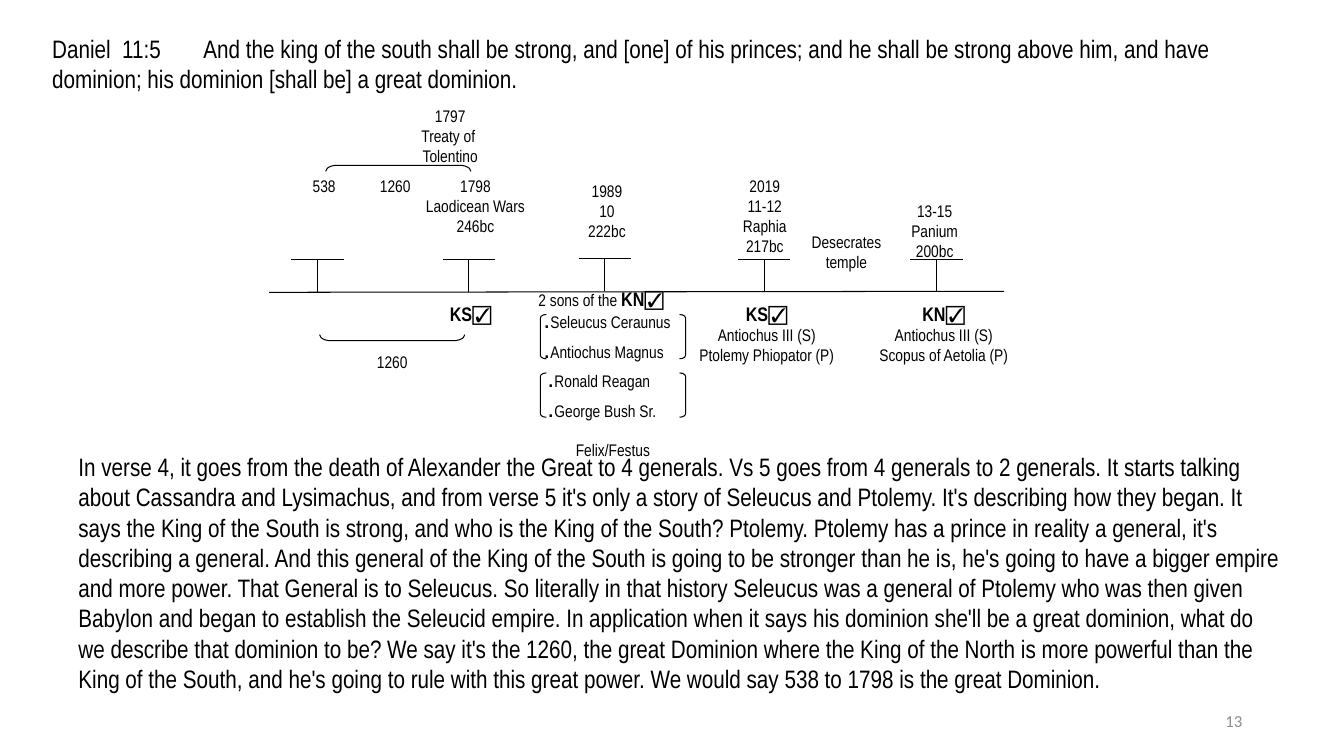
from lxml.etree import SubElement
from pptx import Presentation
from pptx.dml.color import RGBColor
from pptx.enum.shapes import MSO_CONNECTOR as Connector, MSO_SHAPE as Shape
from pptx.enum.text import MSO_ANCHOR as Anchor, PP_ALIGN as Align
from pptx.oxml.ns import qn
from pptx.util import Inches, Pt

NARROW = "Arial Narrow"
BLACK = "000000"
FORMATS = {
    "body": {"name": NARROW, "size": Pt(18)},
    "label": {"name": NARROW, "size": Pt(12)},
    "king": {"name": NARROW, "size": Pt(14), "bold": True},
    "check": {"name": "Arial", "size": Pt(14), "bold": True},
    "dot": {"name": "Arial", "size": Pt(18)},
    "number": {"name": "Calibri", "size": Pt(12)},
}
VERSE = [
    "Daniel  11:5\tAnd the king of the south shall be strong, and [one] of his princes;",
    "and he shall be strong above him, and have dominion;",
    "his dominion [shall be] a great dominion.",
]
COMMENTARY = [
    "In verse 4, it goes from the death of Alexander the Great to 4 generals.",
    "Vs 5 goes from 4 generals to 2 generals.",
    "It starts talking about Cassandra and Lysimachus,",
    "and from verse 5 it's only a story of Seleucus and Ptolemy.",
    "It's describing how they began.",
    "It says the King of the South is strong, and who is the King of the South? Ptolemy.",
    "Ptolemy has a prince in reality a general, it's describing a general.",
    "And this general of the King of the South is going to be stronger than he is,",
    "he's going to have a bigger empire and more power. That General is to Seleucus.",
    "So literally in that history Seleucus was a general of Ptolemy",
    "who was then given Babylon and began to establish the Seleucid empire.",
    "In application when it says his dominion she'll be a great dominion,",
    "what do we describe that dominion to be? We say it's the 1260,",
    "the great Dominion where the King of the North is more powerful",
    "than the King of the South, and he's going to rule with this great power.",
    "We would say 538 to 1798 is the great Dominion.",
]


def color(hex_value):
    """Turn a hex string into a colour."""
    return RGBColor.from_string(hex_value)


def write(slide, box, lines, align=Align.CENTER, inset=(0.04, 0.04), ink=BLACK, anchor=Anchor.TOP):
    """Write lines, each a list of (text, format name) runs, into a box."""
    frame = slide.shapes.add_textbox(*map(Inches, box)).text_frame
    side, edge = map(Inches, inset)
    layout = {
        "word_wrap": True, "vertical_anchor": anchor,
        "margin_left": side, "margin_right": side, "margin_top": edge, "margin_bottom": edge,
    }
    for key, value in layout.items():
        setattr(frame, key, value)
    for index, runs in enumerate(lines):
        paragraph = frame.add_paragraph() if index else frame.paragraphs[0]
        paragraph.alignment = align
        for text, style in runs:
            run = paragraph.add_run()
            run.text = text
            run.font.color.rgb = color(ink)
            for key, value in FORMATS[style].items():
                setattr(run.font, key, value)


def labels(*texts):
    """Make one small-label line from each text."""
    return [[(text, "label")] for text in texts]


def king(name):
    """Make the runs of a king's bold initials and check mark."""
    return [(name, "king"), ("☑", "check")]


def rule(slide, x1, y1, x2, y2):
    """Draw a thin black straight line."""
    line = slide.shapes.add_connector(Connector.STRAIGHT, *map(Inches, (x1, y1, x2, y2)))
    line.line.color.rgb = color(BLACK)
    line.line.width = Pt(0.75)
    SubElement(line._element.spPr, qn("a:effectLst"))


def bracket(slide, kind, box, curve, rotation=0):
    """Draw an unfilled bracket with the given corner curve."""
    shape = slide.shapes.add_shape(kind, *map(Inches, box))
    shape.adjustments[0] = curve
    shape.rotation = rotation
    shape.shadow.inherit = False
    shape.fill.background()
    shape.line.color.rgb = color(BLACK)
    shape.line.width = Pt(0.75)


def passage(slide, box, phrases):
    """Place a left-aligned reading passage joined from its phrases."""
    write(slide, box, [[(" ".join(phrases), "body")]], Align.LEFT, (0.1, 0.05))


def page_number(slide, box, number):
    """Place the grey page number."""
    write(slide, box, [[(number, "number")]], Align.RIGHT, (0.1, 0.05), "8C8C8C", Anchor.MIDDLE)


def axis(slide, left, top, width):
    """Draw the time axis with its T-shaped marks."""
    rule(slide, left, top + 0.33, left + width, top + 0.32)
    for offset, rise in ((0.48, 0), (1.98, 0), (3.33, 0.01), (4.91, 0), (6.62, 0)):
        x, y = left + offset, top - rise
        rule(slide, x, y, x, y + 0.33)
        rule(slide, x - 0.26, y, x + 0.26, y)


def event_labels(slide, left, top):
    """Write the dates above the axis and the kings below it."""
    entries = [
        ((1.25, 0, 1.09, 0.69), labels("1797", "Treaty of ", "Tolentino")),
        ((0, 0.69, 1.09, 0.9), labels("538")),
        ((1, 0.69, 0.5, 0.28), labels("1260")),
        ((1.5, 0.69, 1.09, 0.9), labels("1798", "Laodicean Wars", "246bc")),
        ((2.88, 0.74, 0.94, 0.84), labels("1989", "10", "222bc")),
        ((4.57, 0.69, 0.69, 0.9), labels("2019", "11-12", "Raphia", "217bc")),
        ((5.32, 1.25, 0.81, 0.53), labels("Desecrates", "temple")),
        ((6.19, 0.94, 0.82, 0.67), labels("13-15", "Panium", "200bc")),
        ((1.69, 1.94, 0.62, 0.31), [king("KS")]),
        ((0.5, 2.44, 1.44, 0.28), labels("1260")),
        ((4.19, 1.94, 1.49, 0.81),
         [king("KS"), *labels("Antiochus III (S)", "Ptolemy Phiopator (P)")]),
        ((6, 1.94, 1.38, 0.81),
         [king("KN"), *labels("Antiochus III (S)", "Scopus of Aetolia (P)")]),
        ((2.69, 3.31, 1.44, 0.28), labels("Felix/Festus")),
    ]
    for (x, y, width, height), lines in entries:
        write(slide, (left + x, top + y, width, height), lines)


def bracketed_pair(slide, left, top, indent, names):
    """Place two dotted names between a pair of brackets."""
    lines = [[(".", "dot"), (name, "label")] for name in names]
    write(slide, (left + indent, top - 0.15, 1.44, 0.56), lines, Align.LEFT)
    for kind, x in ((Shape.LEFT_BRACKET, 0), (Shape.RIGHT_BRACKET, 1.38)):
        bracket(slide, kind, (left + x, top, 0.06, 0.44), 0.58)


def timeline(slide, box):
    """Build the whole timeline inside its box."""
    left, top, width, _ = box
    axis(slide, left, top + 1.56, width)
    event_labels(slide, left, top)
    for x, y, turn in ((1.25, -0.06, 90), (1.19, 1.62, 270)):
        bracket(slide, Shape.LEFT_BRACKET, (left + x, top + y, 0.06, 1.44), 1.92, turn)
    sons = [("2 sons of the ", "label"), *king("KN")]
    write(slide, (left + 2.63, top + 1.8, 1.51, 0.3), [sons], Align.LEFT)
    pairs = (
        (-0.01, ("Seleucus Ceraunus", "Antiochus Magnus")),
        (0.03, ("Ronald Reagan", "George Bush Sr.")),
    )
    for row, (indent, names) in enumerate(pairs):
        bracketed_pair(slide, left + 2.69, top + 2.11 + 0.58 * row, indent, names)


def main():
    """Build and save the slide."""
    deck = Presentation()
    deck.slide_width, deck.slide_height = Inches(13.33), Inches(7.5)
    slide = deck.slides.add_slide(deck.slide_layouts[6])
    page_number(slide, (9.42, 6.95, 3, 0.4), "13")
    passage(slide, (0.42, 0.28, 12.14, 0.9), VERSE)
    timeline(slide, (2.67, 1.01, 7.29, 3.59))
    passage(slide, (0.68, 4.43, 12.14, 2.73), COMMENTARY)
    deck.save("out.pptx")


if __name__ == "__main__":
    main()
